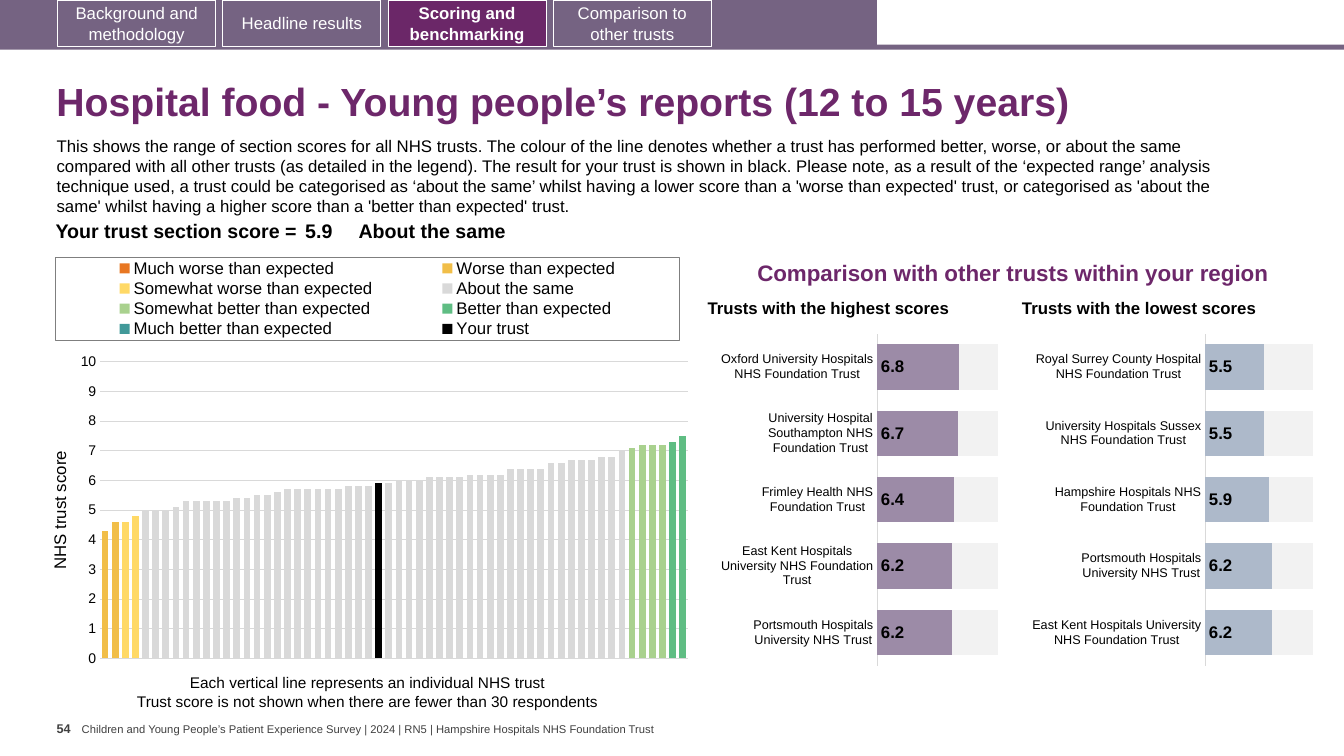
from copy import deepcopy

from lxml import etree
from pptx import Presentation
from pptx.chart.data import CategoryChartData
from pptx.dml.color import RGBColor
from pptx.enum.chart import (XL_CHART_TYPE, XL_LABEL_POSITION,
                             XL_LEGEND_POSITION, XL_TICK_MARK)
from pptx.enum.shapes import MSO_SHAPE
from pptx.enum.text import MSO_ANCHOR, PP_ALIGN
from pptx.oxml import parse_xml
from pptx.util import Pt

LEFT, CENTER, RIGHT = PP_ALIGN.LEFT, PP_ALIGN.CENTER, PP_ALIGN.RIGHT
TOP, MIDDLE, BOTTOM = MSO_ANCHOR.TOP, MSO_ANCHOR.MIDDLE, MSO_ANCHOR.BOTTOM
NO_TICK = XL_TICK_MARK.NONE
C_NS = "http://schemas.openxmlformats.org/drawingml/2006/chart"
A_NS = "http://schemas.openxmlformats.org/drawingml/2006/main"
FONT = "Arial"

BLACK = RGBColor(0, 0, 0)
WHITE = RGBColor(255, 255, 255)
GREY = RGBColor(0x40, 0x40, 0x40)
RULE = RGBColor(0xD9, 0xD9, 0xD9)
PALE = RGBColor(0xF2, 0xF2, 0xF2)
PLUM = RGBColor(0x6D, 0x27, 0x6A)
ACTIVE = RGBColor(0x6B, 0x27, 0x68)
BAND = RGBColor(0x75, 0x63, 0x82)
MAUVE = RGBColor(0x9C, 0x8B, 0xA7)
STEEL = RGBColor(0xAD, 0xB9, 0xCA)

TABS = ["Background and methodology", "Headline results",
        "Scoring and benchmarking", "Comparison to other trusts"]
CURRENT = 2
TITLE = "Hospital food - Young people’s reports (12 to 15 years)"
INTRO = (
    "This shows the range of section scores for all NHS trusts. The colour of "
    "the line denotes whether a trust has performed better, worse, or about "
    "the same compared with all other trusts (as detailed in the legend). The "
    "result for your trust is shown in black. Please note, as a result of the "
    "‘expected range’ analysis technique used, a trust could be categorised as "
    "‘about the same’ whilst having a lower score than a 'worse than expected' "
    "trust, or categorised as 'about the same' whilst having a higher score "
    "than a 'better than expected' trust.")
# text, alignment, column width, side margin
SCORE = [("Your trust section score =", RIGHT, 189, 2.9),
         ("5.9", LEFT, 41, 2.9),
         ("About the same", LEFT, 611, 0)]
# text, box, size, bold, colour, alignment, anchor, margins (side, top)
LABELS = [
    (INTRO, (33.4, 93.2, 873.4, 65.5), 12, False, BLACK, LEFT, TOP, (7.2, 3.6)),
    ("Each vertical line represents an individual NHS trust",
     (82.7, 477.4, 360, 21), 11, False, BLACK, CENTER, TOP, (7.2, 3.6)),
    ("Trust score is not shown when there are fewer than 30 respondents",
     (82.7, 491, 360, 21), 11, False, BLACK, CENTER, TOP, (7.2, 3.6)),
    ("Comparison with other trusts within your region",
     (540.9, 167.8, 394, 36.7), 16, True, PLUM, LEFT, BOTTOM, (0, 0)),
    ("Trusts with the highest scores",
     (505.4, 210.5, 206, 16.6), 12, True, BLACK, LEFT, BOTTOM, (0, 0)),
    ("Trusts with the lowest scores",
     (730, 210.5, 201, 16.6), 12, True, BLACK, LEFT, BOTTOM, (0, 0)),
    ("54", (40.5, 511.4, 18, 28.8), 9, True, GREY, LEFT, TOP, (0, 3.6)),
    ("Children and Young People’s Patient Experience Survey | 2024 | RN5 | "
     "Hampshire Hospitals NHS Foundation Trust",
     (58.4, 515.9, 440, 9.4), 8, False, GREY, LEFT, MIDDLE, (0, 0)),
]
COUNT = 58
# name, colour, rank of first trust, scores
GROUPS = [
    ("Much worse than expected", RGBColor(0xE8, 0x77, 0x22), 1, []),
    ("Worse than expected", RGBColor(0xF1, 0xBE, 0x48), 1, [4.3, 4.6]),
    ("Somewhat worse than expected", RGBColor(0xFF, 0xD9, 0x66), 3, [4.6, 4.8]),
    ("About the same", RULE, 5,
     [5, 5, 5, 5.1, 5.3, 5.3, 5.3, 5.3, 5.3, 5.4, 5.4, 5.5, 5.5, 5.6, 5.7, 5.7,
      5.7, 5.7, 5.7, 5.7, 5.8, 5.8, 5.8, 5.9, 5.9, 6, 6, 6, 6.1, 6.1, 6.1, 6.1,
      6.2, 6.2, 6.2, 6.2, 6.4, 6.4, 6.4, 6.4, 6.6, 6.6, 6.7, 6.7, 6.7, 6.8, 6.8,
      7]),
    ("Somewhat better than expected", RGBColor(0xA9, 0xD1, 0x8E), 53,
     [7.1, 7.2, 7.2, 7.2]),
    ("Better than expected", RGBColor(0x5F, 0xBD, 0x83), 57, [7.3, 7.5]),
    ("Much better than expected", RGBColor(0x41, 0x99, 0x99), 1, []),
    ("Your trust", BLACK, 28, [5.9]),
]
HIGH = [("Oxford University Hospitals NHS Foundation Trust", 6.8),
        ("University Hospital Southampton NHS Foundation Trust", 6.7),
        ("Frimley Health NHS Foundation Trust", 6.4),
        ("East Kent Hospitals University NHS Foundation Trust", 6.2),
        ("Portsmouth Hospitals University NHS Trust", 6.2)]
LOW = [("Royal Surrey County Hospital NHS Foundation Trust", 5.5),
       ("University Hospitals Sussex NHS Foundation Trust", 5.5),
       ("Hampshire Hospitals NHS Foundation Trust", 5.9),
       ("Portsmouth Hospitals University NHS Trust", 6.2),
       ("East Kent Hospitals University NHS Foundation Trust", 6.2)]
# rows, colour, box, plot area as shares of the box
REGION = [(LOW, STEEL, (733.9, 233.5, 208, 247), (0.61, 0.02, 0.37, 0.96)),
          (HIGH, MAUVE, (511.2, 233.5, 205.9, 247), (0.56, 0.02, 0.42, 0.96))]


def pts(box):
    return [Pt(v) for v in box]


def style(font, size, color=BLACK, bold=False):
    font.name, font.size, font.bold = FONT, Pt(size), bold
    font.color.rgb = color


def write(frame, text, size, color, bold, align):
    para = frame.paragraphs[0]
    para.alignment = align
    run = para.add_run()
    run.text = text
    style(run.font, size, color, bold)


def block(box, fill, line=None):
    shape = slide.shapes.add_shape(MSO_SHAPE.RECTANGLE, *pts(box))
    shape.shadow.inherit = False
    shape.fill.solid()
    shape.fill.fore_color.rgb = fill
    if line is None:
        shape.line.fill.background()
    else:
        shape.line.color.rgb = line
        shape.line.width = Pt(0.75)
    return shape


def layout(parent, index, box, inner=False):
    """Fix the place of a chart part, given as shares of the chart."""
    for old in parent.findall(f"{{{C_NS}}}layout"):
        parent.remove(old)
    root = etree.Element(f"{{{C_NS}}}layout")
    manual = etree.SubElement(root, f"{{{C_NS}}}manualLayout")
    items = [("layoutTarget", "inner")] if inner else []
    items += [("xMode", "edge"), ("yMode", "edge"), *zip("xywh", box)]
    for tag, val in items:
        etree.SubElement(manual, f"{{{C_NS}}}{tag}", val=str(val))
    parent.insert(index, root)


def second_axis(chart):
    """Move the last series to a right-hand axis without labels."""
    bars, cat, val = (chart.element.xpath(f".//c:{tag}")[0]
                      for tag in ("barChart", "catAx", "valAx"))
    extra = [deepcopy(node) for node in (bars, cat, val)]
    bars.remove(bars.xpath("c:ser")[-1])
    for ser in extra[0].xpath("c:ser")[:-1]:
        extra[0].remove(ser)
    bars.addnext(extra[0])
    val.addnext(extra[1])
    extra[1].addnext(extra[2])
    ids = {ax.xpath("c:axId")[0].get("val"): str(9001 + i)
           for i, ax in enumerate((cat, val))}
    for node in extra:
        for ref in node.xpath("c:axId | c:crossAx"):
            ref.set("val", ids[ref.get("val")])
    right = extra[2]
    for part in right.xpath("c:title | c:majorGridlines"):
        right.remove(part)
    for tag, value in (("axPos", "r"), ("tickLblPos", "none"), ("crosses", "max")):
        right.xpath(f"c:{tag}")[0].set("val", value)


def graph(kind, data, box, area, gap, colors):
    chart = slide.shapes.add_chart(kind, *pts(box), data).chart
    chart.has_title = chart.has_legend = False
    style(chart.font, 10)
    plot = chart.plots[0]
    plot.vary_by_categories = False
    plot.gap_width, plot.overlap = gap, 100
    for series, color in zip(plot.series, colors):
        series.format.fill.solid()
        series.format.fill.fore_color.rgb = color
    axis = chart.value_axis
    axis.minimum_scale, axis.maximum_scale = 0, 10
    layout(chart.element.xpath(".//c:plotArea")[0], 0, area, True)
    return chart


def range_chart():
    data = CategoryChartData()
    data.categories = [str(n + 1) for n in range(COUNT)]
    for name, _, first, vals in GROUPS:
        row = [None] * COUNT
        row[first - 1:first - 1 + len(vals)] = vals
        data.add_series(name, row)
    chart = graph(XL_CHART_TYPE.COLUMN_CLUSTERED, data,
                  (33.1, 177.6, 461.5, 303.1), (0.083, 0.267, 0.91, 0.699),
                  50, [group[1] for group in GROUPS])
    chart.category_axis.visible = False
    axis = chart.value_axis
    axis.major_unit = 1
    axis.major_tick_mark = NO_TICK
    axis.format.line.fill.background()
    axis.major_gridlines.format.line.color.rgb = RULE
    axis.major_gridlines.format.line.width = Pt(0.75)
    style(axis.tick_labels.font, 10)
    write(axis.axis_title.text_frame, "NHS trust score", 12, BLACK, False, CENTER)
    chart.has_legend = True
    legend = chart.legend
    legend.position = XL_LEGEND_POSITION.TOP
    legend.include_in_layout = False
    style(legend.font, 12)
    node = chart.element.xpath(".//c:legend")[0]
    layout(node, 1, (0.014, 0.02, 0.966, 0.196))
    node.xpath("c:overlay")[0].addnext(parse_xml(
        f'<c:spPr xmlns:c="{C_NS}" xmlns:a="{A_NS}"><a:ln w="9525"><a:solidFill>'
        '<a:srgbClr val="7F7F7F"/></a:solidFill></a:ln></c:spPr>'))
    second_axis(chart)


def region_chart(rows, color, box, area):
    data = CategoryChartData(number_format="0.0")
    data.categories = [name for name, _ in rows]
    data.add_series("Series 1", [val for _, val in rows])
    data.add_series("Series 2", [round(10 - val, 1) for _, val in rows])
    chart = graph(XL_CHART_TYPE.BAR_STACKED, data, box, area, 47, (color, PALE))
    chart.value_axis.visible = chart.value_axis.has_major_gridlines = False
    axis = chart.category_axis
    axis.reverse_order = True
    axis.major_tick_mark = NO_TICK
    axis.format.line.color.rgb = RULE
    axis.format.line.width = Pt(0.75)
    style(axis.tick_labels.font, 9)
    tags = chart.plots[0].series[0].data_labels
    tags.show_value = True
    tags.number_format, tags.number_format_is_linked = "0.0", False
    tags.position = XL_LABEL_POSITION.INSIDE_BASE
    style(tags.font, 12, bold=True)


prs = Presentation()
prs.slide_width, prs.slide_height = Pt(960), Pt(540)
slide = prs.slides.add_slide(prs.slide_layouts[5])

block((0, 31.9, 960, 3.6), BAND)
block((0, 0, 626.4, 33.8), BAND)
for i, name in enumerate(TABS):
    on = i == CURRENT
    tab = block((41.2 + 118 * i, 0, 113, 33.2), ACTIVE if on else BAND, WHITE)
    tab.text_frame.word_wrap = True
    tab.text_frame.vertical_anchor = MIDDLE
    write(tab.text_frame, name, 12, WHITE, on, CENTER)

title = slide.shapes.title
title.left, title.top, title.width, title.height = pts((33.1, 48.2, 899, 51.8))
title.text_frame.vertical_anchor = MIDDLE
title.text_frame.paragraphs[0].line_spacing = 0.9
write(title.text_frame, TITLE, 28, PLUM, True, LEFT)

for text, box, size, bold, color, align, anchor, (side, top) in LABELS:
    frame = slide.shapes.add_textbox(*pts(box)).text_frame
    frame.word_wrap = True
    frame.vertical_anchor = anchor
    frame.margin_left = frame.margin_right = Pt(side)
    frame.margin_top = frame.margin_bottom = Pt(top)
    write(frame, text, size, color, bold, align)

table = slide.shapes.add_table(1, len(SCORE), *pts((26.1, 154.8, 841, 22.3))).table
table.first_row = table.horz_banding = False
for i, (text, align, width, side) in enumerate(SCORE):
    table.columns[i].width = Pt(width)
    cell = table.cell(0, i)
    cell.fill.background()
    cell.margin_left = cell.margin_right = Pt(side)
    cell.margin_top = cell.margin_bottom = Pt(2.9)
    write(cell.text_frame, text, 14, BLACK, True, align)

range_chart()
for part in REGION:
    region_chart(*part)

prs.save("out.pptx")
